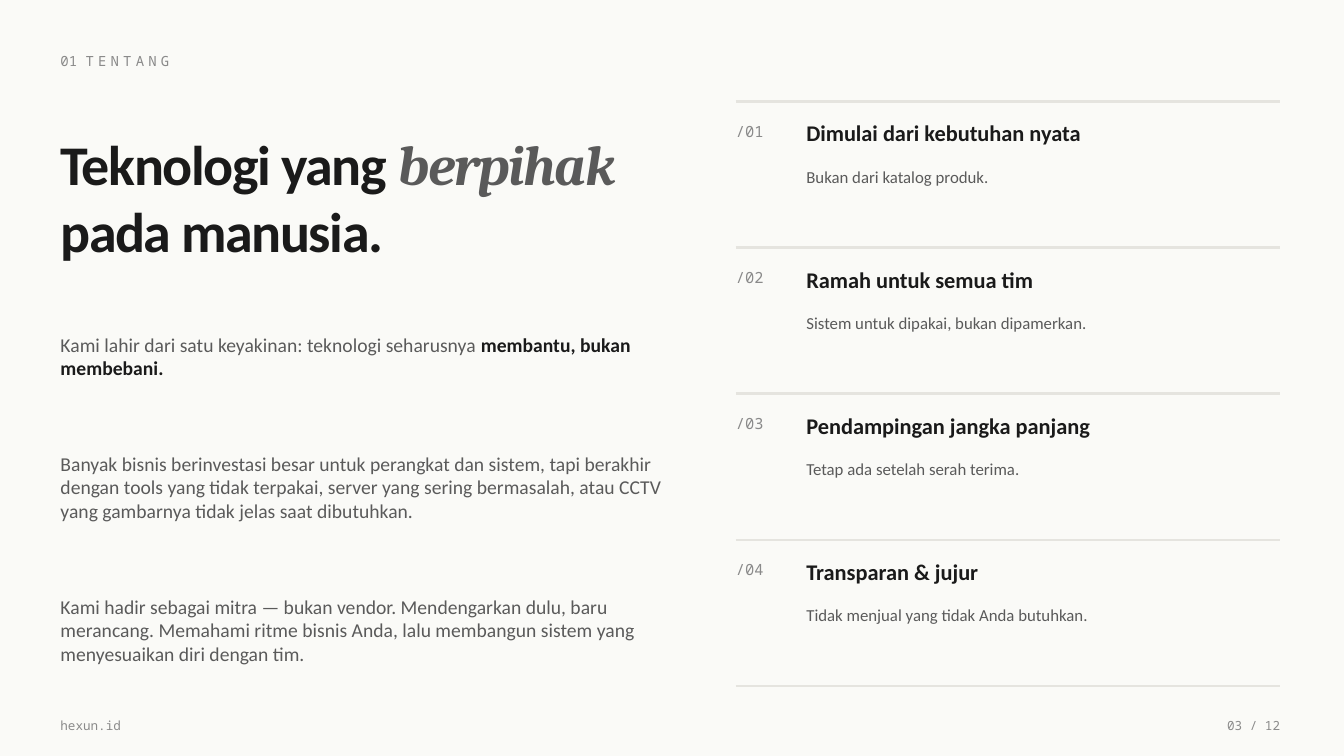
from lxml import etree
from pptx import Presentation
from pptx.dml.color import RGBColor
from pptx.enum import shapes, text
from pptx.oxml.ns import qn
from pptx.util import Pt

PAPER = RGBColor(0xFA, 0xFA, 0xF7)
INK = RGBColor(0x1A, 0x1A, 0x1A)
SOFT = RGBColor(0x5A, 0x5A, 0x5A)
MUTED = RGBColor(0x8A, 0x8A, 0x8A)
RULE = RGBColor(0xE5, 0xE4, 0xDF)
SANS, SERIF, MONO = "Calibri", "Cambria", "Noto Sans Mono"

LEFT = 43.2
LIST_LEFT, LIST_RIGHT, LIST_TOP, ROW_PITCH = 525.6, 914.4, 72, 104.4
ENTRY_LEFT = 576

HEADLINE = [
    [("Teknologi yang ", SERIF and SANS, INK, False), ("berpihak", SERIF, SOFT, True)],
    [("pada manusia.", SANS, INK, False)],
]
STORY = [
    [("Kami lahir dari satu keyakinan: teknologi seharusnya ", SOFT, False),
     ("membantu, bukan membebani.", INK, True)],
    [("Banyak bisnis berinvestasi besar untuk perangkat dan sistem, tapi berakhir "
      "dengan tools yang tidak terpakai, server yang sering bermasalah, atau CCTV "
      "yang gambarnya tidak jelas saat dibutuhkan.", SOFT, False)],
    [("Kami hadir sebagai mitra — bukan vendor. Mendengarkan dulu, baru merancang. "
      "Memahami ritme bisnis Anda, lalu membangun sistem yang menyesuaikan diri "
      "dengan tim.", SOFT, False)],
]
PRINCIPLES = [
    ("Dimulai dari kebutuhan nyata", "Bukan dari katalog produk."),
    ("Ramah untuk semua tim", "Sistem untuk dipakai, bukan dipamerkan."),
    ("Pendampingan jangka panjang", "Tetap ada setelah serah terima."),
    ("Transparan & jujur", "Tidak menjual yang tidak Anda butuhkan."),
]


def fit_frame(holder, left, top, width, height, anchor):
    """Place a text holder and clear its margins and autofit."""
    holder.left, holder.top = Pt(left), Pt(top)
    holder.width, holder.height = Pt(width), Pt(height)
    frame = holder.text_frame
    frame.margin_left = frame.margin_right = frame.margin_top = frame.margin_bottom = 0
    frame.word_wrap = True
    frame.auto_size = text.MSO_AUTO_SIZE.NONE
    frame.vertical_anchor = anchor
    return frame


def add_label(left, top, width, height, wording, size, face, colour, bold=False):
    box = slide.shapes.add_textbox(0, 0, 0, 0)
    frame = fit_frame(box, left, top, width, height, text.MSO_ANCHOR.MIDDLE)
    frame.text = wording
    paragraph = frame.paragraphs[0]
    for run in paragraph.runs:
        run.font.size, run.font.name, run.font.bold = Pt(size), face, bold
        run.font.color.rgb = colour
    return paragraph


deck = Presentation()
deck.slide_width, deck.slide_height = Pt(960), Pt(540)
slide = deck.slides.add_slide(deck.slide_layouts[1])
slide.background.fill.solid()
slide.background.fill.fore_color.rgb = PAPER

# Section marker
section = add_label(LEFT, 32.4, 576, 21.6, "01 ", 10, MONO, MUTED)
section_name = section.add_run()
section_name.text = "TENTANG"
section_name.font.size, section_name.font.name = Pt(10), MONO
section_name.font.color.rgb = MUTED
section_name._r.get_or_add_rPr().set("spc", "300")

# Headline
headline = fit_frame(slide.shapes.title, LEFT, 72, 518.4, 136.8, text.MSO_ANCHOR.MIDDLE)
for index, pieces in enumerate(HEADLINE):
    line = headline.add_paragraph() if index else headline.paragraphs[0]
    line.alignment = text.PP_ALIGN.LEFT
    for wording, face, colour, italic in pieces:
        run = line.add_run()
        run.text = wording
        run.font.size, run.font.name = Pt(40), face
        run.font.bold, run.font.italic = True, italic
        run.font.color.rgb = colour
        run._r.get_or_add_rPr().set("spc", "-100")

# Story
story = fit_frame(slide.placeholders[1], LEFT, 237.6, 432, 244.8, text.MSO_ANCHOR.TOP)
for index, pieces in enumerate(STORY):
    passage = story.add_paragraph() if index else story.paragraphs[0]
    properties = passage._p.get_or_add_pPr()
    properties.set("marL", "0")
    properties.set("indent", "0")
    etree.SubElement(properties, qn("a:buNone"))
    passage.space_before, passage.space_after = Pt(0), Pt(51.5)
    for wording, colour, bold in pieces:
        run = passage.add_run()
        run.text = wording
        run.font.size, run.font.name, run.font.bold = Pt(14), SANS, bold
        run.font.color.rgb = colour

# Principles, with a rule above each and one below the last
for row in range(len(PRINCIPLES) + 1):
    y = LIST_TOP + row * ROW_PITCH
    rule = slide.shapes.add_connector(
        shapes.MSO_CONNECTOR.STRAIGHT,
        Pt(LIST_LEFT), Pt(y + 0.36), Pt(LIST_RIGHT), Pt(y + 0.36))
    rule.line.color.rgb = RULE
    rule.line.width = Pt(1.75)
    etree.SubElement(rule._element.spPr, qn("a:effectLst"))

for row, (principle, detail) in enumerate(PRINCIPLES):
    y = LIST_TOP + row * ROW_PITCH
    entry_width = LIST_RIGHT - ENTRY_LEFT
    add_label(LIST_LEFT, y + 10.8, 36, 21.6, f"/{row + 1:02}", 11, MONO, MUTED)
    add_label(ENTRY_LEFT, y + 8.64, entry_width, 28.8, principle, 16, SANS, INK, True)
    add_label(ENTRY_LEFT, y + 39.6, entry_width, 28.8, detail, 12, SANS, SOFT)

# Footer
add_label(LEFT, 507.6, 144, 21.6, "hexun.id", 9, MONO, MUTED)
page = add_label(856.8, 507.6, 57.6, 21.6, "03 / 12", 9, MONO, MUTED)
page.alignment = text.PP_ALIGN.RIGHT

deck.save("out.pptx")
